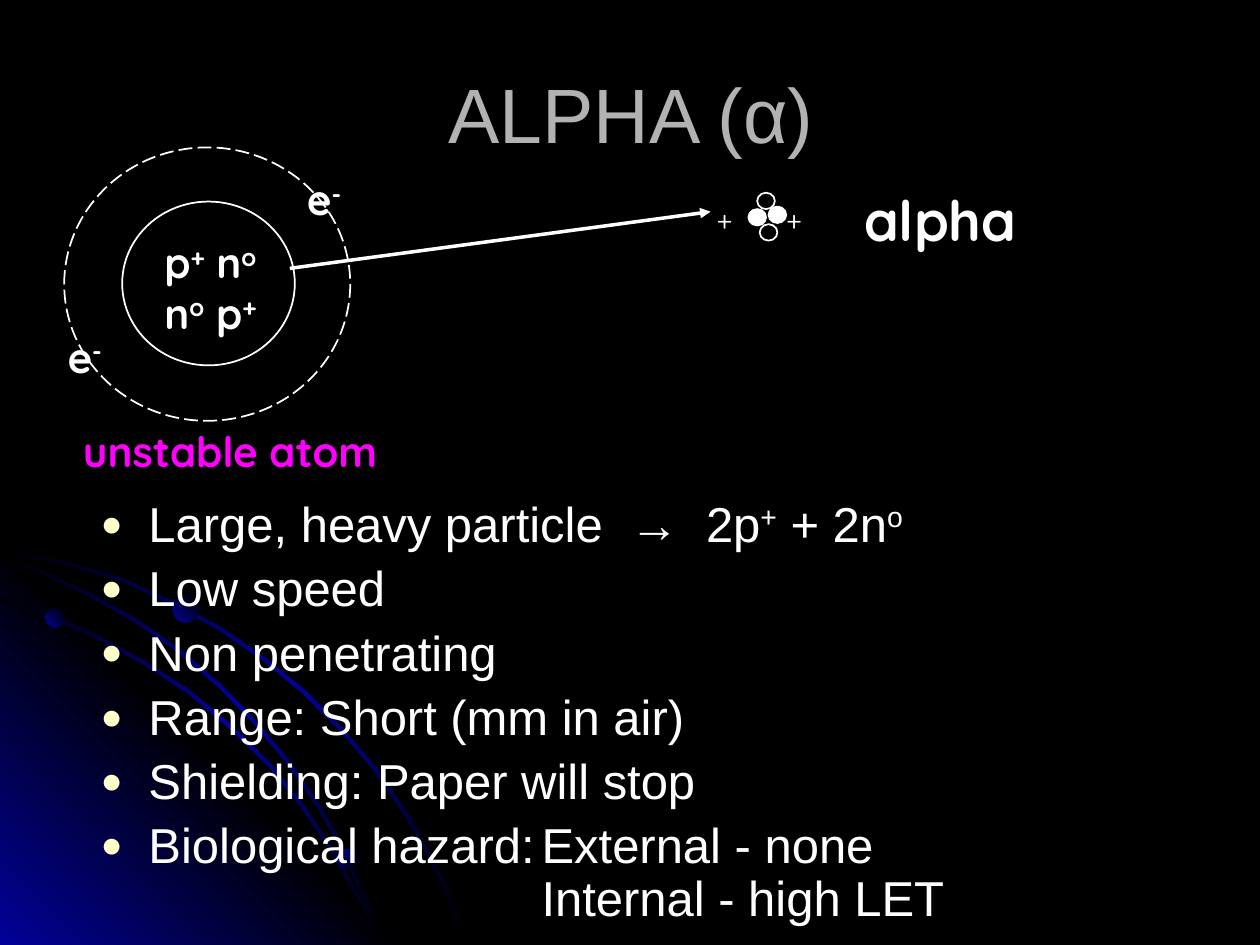
from lxml import etree
from pptx import Presentation
from pptx.dml.color import RGBColor
from pptx.enum.dml import MSO_LINE
from pptx.enum.shapes import MSO_CONNECTOR, MSO_SHAPE
from pptx.enum.text import MSO_ANCHOR, MSO_AUTO_SIZE, PP_ALIGN
from pptx.oxml.ns import qn
from pptx.util import Inches, Pt

OVAL, STRAIGHT = MSO_SHAPE.OVAL, MSO_CONNECTOR.STRAIGHT
LEFT, CENTER = PP_ALIGN.LEFT, PP_ALIGN.CENTER
MIDDLE, TOP = MSO_ANCHOR.MIDDLE, MSO_ANCHOR.TOP
GROW, FIXED = MSO_AUTO_SIZE.SHAPE_TO_FIT_TEXT, MSO_AUTO_SIZE.NONE
LONG_DASH = MSO_LINE.LONG_DASH

COLUMNS, ROWS = 10, 7.5
WHITE, BLACK, BLUE = "FFFFFF", "000000", "010199"
GRAY, MAGENTA, CREAM = "B2B2B2", "FF00FF", "FFFFCC"
RIBBON = 0.02

ARC_TOP = [(0, 0.1), (0.28, 0.16), (0.57, 0.22), (0.98, 0.34), (1.36, 0.52),
           (1.74, 0.72), (2.09, 0.96), (2.42, 1.23), (2.72, 1.53), (3, 1.86),
           (3.25, 2.23), (3.39, 2.48), (3.52, 2.73), (3.62, 2.98), (3.72, 3.24)]
ARC_LOW = [(0, 0.5), (0.41, 0.63), (0.79, 0.8), (1.17, 1.01), (1.52, 1.24),
           (1.84, 1.51), (2.15, 1.81), (2.42, 2.15), (2.66, 2.51),
           (2.86, 2.87), (2.96, 3.05), (3.03, 3.24)]
ARC_MIDDLE = [(0, 0.17), (0.39, 0.3), (0.76, 0.48), (1.11, 0.68), (1.44, 0.91),
              (1.75, 1.18), (2.04, 1.48), (2.29, 1.78), (2.54, 2.14),
              (2.69, 2.4), (2.82, 2.68), (2.94, 2.95), (3.03, 3.24)]
FACTS = ["Large, heavy particle  →  2p^+^ + 2n^o", "Low speed", "Non penetrating",
         "Range: Short (mm in air)", "Shielding: Paper will stop",
         "Biological hazard:\tExternal - none\n\t\tInternal - high LET"]


def color(code):
    """Turn a hex string into a colour."""
    return RGBColor.from_string(code)


def cells(box, x, y, width, height):
    """Place a part by columns and rows counted from the box's corner."""
    return [Inches(v) for v in (box[0] + x, box[1] + y, width, height)]


def add_node(parent, tag, **attributes):
    """Append a DrawingML element."""
    return etree.SubElement(parent, qn("a:" + tag), attributes)


def shade(shape, codes, angle):
    """Give a shape an evenly spaced gradient and no line."""
    shape.shadow.inherit = False
    shape.line.fill.background()
    shape.fill.gradient()
    gradient = shape._element.spPr.find(qn("a:gradFill"))
    for child in list(gradient):
        gradient.remove(child)
    stops = add_node(gradient, "gsLst")
    for i, code in enumerate(codes):
        stop = add_node(stops, "gs", pos=str(100000 * i // (len(codes) - 1)))
        add_node(stop, "srgbClr", val=code)
    add_node(gradient, "lin", ang=str(angle * 60000), scaled="0")


def add_outline(shapes, box, points):
    """Draw a closed outline from grid points."""
    spots = [(Inches(box[0] + x), Inches(box[1] + y)) for x, y in points]
    builder = shapes.build_freeform(*spots[0])
    builder.add_line_segments(spots[1:], close=True)
    return builder.convert_to_shape()


def add_ring(shapes, place, filled=False, dash=None):
    """Draw a white circle, hollow or filled."""
    ring = shapes.add_shape(OVAL, *place)
    ring.shadow.inherit = False
    if filled:
        ring.fill.solid()
        ring.fill.fore_color.rgb = color(WHITE)
    else:
        ring.fill.background()
    ring.line.color.rgb = color(WHITE)
    ring.line.width = Pt(1)
    if dash:
        ring.line.dash_style = dash


def write(frame, paragraphs, size=24, font="Quicksand", ink=WHITE, bold=False,
          align=LEFT, anchor=TOP, wrap=False, fit=GROW, bullets=False):
    """Fill a text frame; carets switch superscript on and off."""
    frame.word_wrap, frame.auto_size, frame.vertical_anchor = wrap, fit, anchor
    for i, text in enumerate(paragraphs):
        paragraph = frame.paragraphs[0] if i == 0 else frame.add_paragraph()
        paragraph.alignment = align
        if bullets:
            add_bullet(paragraph, first=i == 0)
        for j, line in enumerate(text.split("\n")):
            if j:
                paragraph.add_line_break()
            for k, part in enumerate(line.split("^")):
                run = paragraph.add_run()
                run.text = part
                run.font.size, run.font.name, run.font.bold = Pt(size), font, bold
                run.font.color.rgb = color(ink)
                if k % 2:
                    run._r.get_or_add_rPr().set("baseline", "30000")


def add_bullet(paragraph, first):
    """Give a paragraph its hanging bullet, tab stop and spacing."""
    layout = paragraph._p.get_or_add_pPr()
    layout.set("marL", str(Inches(0.38)))
    layout.set("indent", str(Inches(-0.38)))
    add_node(add_node(layout, "buClr"), "srgbClr", val=CREAM)
    add_node(layout, "buSzPct", val="75000")
    add_node(layout, "buFont", typeface="Arial")
    add_node(layout, "buChar", char="●")
    add_node(add_node(layout, "tabLst"), "tab", pos=str(Inches(3.44)), algn="l")
    paragraph.line_spacing = 0.9
    paragraph.space_before = Pt(0 if first else 6.5)


def add_label(shapes, place, *paragraphs, **style):
    """Add a text box with the given paragraphs."""
    write(shapes.add_textbox(*place).text_frame, paragraphs, **style)


def draw_corner(shapes, box):
    """Draw the glowing corner with its orbits and dots."""
    def add_orbit(arc):
        inner = [(max(0, x - RIBBON), min(y + RIBBON, 3.24)) for x, y in reversed(arc)]
        shade(add_outline(shapes, box, arc + inner), [BLACK, BLUE, BLACK], 45)

    add_orbit(ARC_TOP)
    corner = add_outline(shapes, box, [(3.22, 3.25), (0, 3.25), (0, 0.02)])
    shade(corner, [BLUE, BLACK, BLUE], 315)
    add_orbit(ARC_LOW)
    add_orbit(ARC_MIDDLE)
    for x, y, size, angle in [(0.36, 0.58, 0.15, 315), (2.67, 2.49, 0.16, 45),
                              (1.37, 0.48, 0.21, 315)]:
        dot = shapes.add_shape(OVAL, *cells(box, x, y, size, size))
        shade(dot, [BLUE, BLACK], angle)


def draw_atom(shapes, box):
    """Draw the unstable atom with its nucleus, electrons and caption."""
    add_label(shapes, cells(box, 0.05, 2.16, 2.59, 0.5), "unstable atom",
              ink=MAGENTA, bold=True)
    add_ring(shapes, cells(box, 0, 0, 2.27, 2.17), dash=LONG_DASH)
    for x, y in [(1.83, 0.16), (-0.07, 1.41)]:
        add_label(shapes, cells(box, x, y, 0.5, 0.5), "e^-", bold=True)
    add_ring(shapes, cells(box, 0.46, 0.43, 1.37, 1.3))
    add_label(shapes, cells(box, 0.58, 0.66, 1.16, 0.9), "p^+^ n^o", "n^o^ p^+",
              bold=True, align=CENTER, wrap=True)


def draw_particle(shapes, box):
    """Draw the emitted alpha particle and its name."""
    add_label(shapes, cells(box, 1.17, -0.08, 1.43, 0.63), "alpha", size=32, bold=True)
    cluster = shapes.add_group_shape().shapes
    for x, y, filled in [(0.42, 0.03, False), (0.51, 0.14, True),
                         (0.35, 0.16, True), (0.44, 0.28, False)]:
        add_ring(cluster, cells(box, x, y, 0.14, 0.13), filled)
    for x in (0, 0.55):
        add_label(cluster, cells(box, x, 0, 0.37, 0.56), "^+", size=28)


def draw_path(shapes, start, end):
    """Draw the arrow along which the particle leaves."""
    ends = [Inches(v) for v in start + end]
    arrow = shapes.add_connector(STRAIGHT, *ends)
    arrow.line.color.rgb = color(WHITE)
    arrow.line.width = Pt(2)
    add_node(arrow.line._get_or_add_ln(), "tailEnd", type="triangle")
    add_node(arrow._element.spPr, "effectLst")


def place_title(title, box):
    """Move and format the title placeholder."""
    title.left, title.top, title.width, title.height = cells(box, 0, 0, *box[2:])
    write(title.text_frame, ["ALPHA (α)"], size=44, font="Arial", ink=GRAY,
          align=CENTER, anchor=MIDDLE, wrap=True, fit=FIXED)


def main():
    """Build and save the slide."""
    deck = Presentation()
    deck.slide_width, deck.slide_height = Inches(COLUMNS), Inches(ROWS)
    slide = deck.slides.add_slide(deck.slide_layouts[5])
    slide.background.fill.solid()
    slide.background.fill.fore_color.rgb = color(BLACK)
    shapes = slide.shapes
    draw_corner(shapes, (0, 4.25))
    draw_path(shapes, (2.3, 2.13), (5.64, 1.68))
    place_title(shapes.title, (0.77, 0.35, 8.48, 1.09))
    add_label(shapes, cells((0.7, 3.92), 0, 0, 9.12, 3.42), *FACTS, size=28,
              font="Arial", wrap=True, fit=FIXED, bullets=True)
    draw_particle(shapes, (5.59, 1.5))
    draw_atom(shapes, (0.51, 1.17))
    deck.save("out.pptx")


if __name__ == "__main__":
    main()
